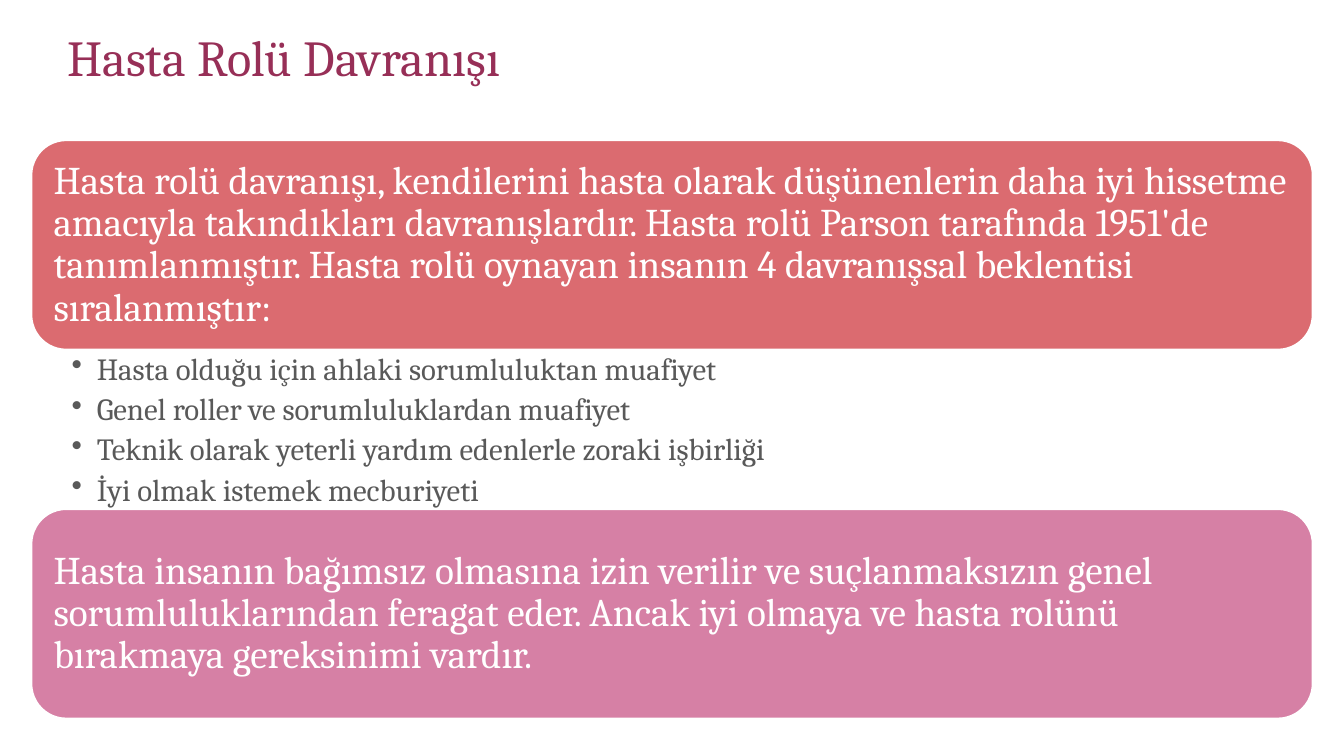
from lxml.etree import SubElement
from pptx import Presentation
from pptx.dml.color import RGBColor
from pptx.enum.shapes import MSO_SHAPE as Shape
from pptx.enum.text import MSO_ANCHOR as Anchor, PP_ALIGN as Align
from pptx.oxml.ns import qn
from pptx.util import Inches, Pt

WIDTH, HEIGHT = Inches(13.33), Inches(7.5)
FONT = "Cambria"
WHITE, PLUM, GREY, CORAL, PINK = "FFFFFF", "972F57", "595959", "DB6B70", "D680A5"

LEFT, STACK_TOP, STACK_WIDTH = 2.33, 18.53, 95.35
CARD_HEIGHT, LIST_HEIGHT = 27.73, 21.07

TITLE = "Hasta Rolü Davranışı"
DEFINITION = (
    "Hasta rolü davranışı, kendilerini hasta olarak düşünenlerin daha iyi hissetme "
    "amacıyla takındıkları davranışlardır. Hasta rolü Parson tarafında 1951'de "
    "tanımlanmıştır. Hasta rolü oynayan insanın 4 davranışsal beklentisi sıralanmıştır:"
)
EXPECTATIONS = [
    "Hasta olduğu için ahlaki sorumluluktan muafiyet",
    "Genel roller ve sorumluluklardan muafiyet",
    "Teknik olarak yeterli yardım edenlerle zoraki işbirliği",
    "İyi olmak istemek mecburiyeti",
]
CONCLUSION = (
    "Hasta insanın bağımsız olmasına izin verilir ve suçlanmaksızın genel "
    "sorumluluklarından feragat eder. Ancak iyi olmaya ve hasta rolünü "
    "bırakmaya gereksinimi vardır."
)


def color(value):
    """Turn a hex string into a colour."""
    return RGBColor.from_string(value)


def area(left, top, width, height):
    """Turn percentages of the slide into a position and size."""
    shares = ((left, WIDTH), (top, HEIGHT), (width, WIDTH), (height, HEIGHT))
    return [round(share * side / 100) for share, side in shares]


def set_frame(shape, insets, anchor):
    """Wrap a shape's text with left, top, right and bottom insets in inches."""
    frame = shape.text_frame
    frame.word_wrap = True
    frame.vertical_anchor = anchor
    (frame.margin_left, frame.margin_top,
     frame.margin_right, frame.margin_bottom) = map(Inches, insets)
    return frame


def add_bullet(para):
    """Give a paragraph a hanging round bullet."""
    properties = para._p.get_or_add_pPr()
    properties.set("marL", str(Inches(0.25)))
    properties.set("indent", str(-Inches(0.25)))
    SubElement(properties, qn("a:buChar"), char="•")


def write(frame, lines, size, ink, bulleted=False):
    """Write each line as a paragraph."""
    for index, line in enumerate(lines):
        para = frame.add_paragraph() if index else frame.paragraphs[0]
        para.alignment = Align.LEFT
        para.line_spacing = 0.9
        if bulleted:
            para.space_after = Pt(5)
            add_bullet(para)
        span = para.add_run()
        span.text = line
        span.font.name = FONT
        span.font.size = Pt(size)
        span.font.color.rgb = color(ink)


def add_text(page, place, lines, size, ink, insets, bulleted=False):
    """Add a text box anchored at its top."""
    box = page.shapes.add_textbox(*area(*place))
    write(set_frame(box, insets, Anchor.TOP), lines, size, ink, bulleted)


def add_card(page, top, text, fill):
    """Add a rounded card with centred-height text."""
    place = area(LEFT, top, STACK_WIDTH, CARD_HEIGHT)
    card = page.shapes.add_shape(Shape.ROUNDED_RECTANGLE, *place)
    card.shadow.inherit = False
    card.fill.solid()
    card.fill.fore_color.rgb = color(fill)
    card.line.color.rgb = color(WHITE)
    card.line.width = Pt(1.5)
    write(set_frame(card, [0.12] * 4, Anchor.MIDDLE), [text], 28, WHITE)


def main():
    """Build and save the slide."""
    deck = Presentation()
    deck.slide_width, deck.slide_height = WIDTH, HEIGHT
    page = deck.slides.add_slide(deck.slide_layouts[6])
    list_top = STACK_TOP + CARD_HEIGHT
    add_text(page, (4.28, 3.73, 82.52, 17.33), [TITLE], 36, PLUM, (0.1, 0.05, 0.1, 0.05))
    add_card(page, STACK_TOP, DEFINITION, CORAL)
    add_text(page, (LEFT, list_top, STACK_WIDTH, LIST_HEIGHT), EXPECTATIONS, 22, GREY,
             (0.4, 0.04, 0.22, 0.04), bulleted=True)
    add_card(page, list_top + LIST_HEIGHT, CONCLUSION, PINK)
    deck.save("out.pptx")


if __name__ == "__main__":
    main()
